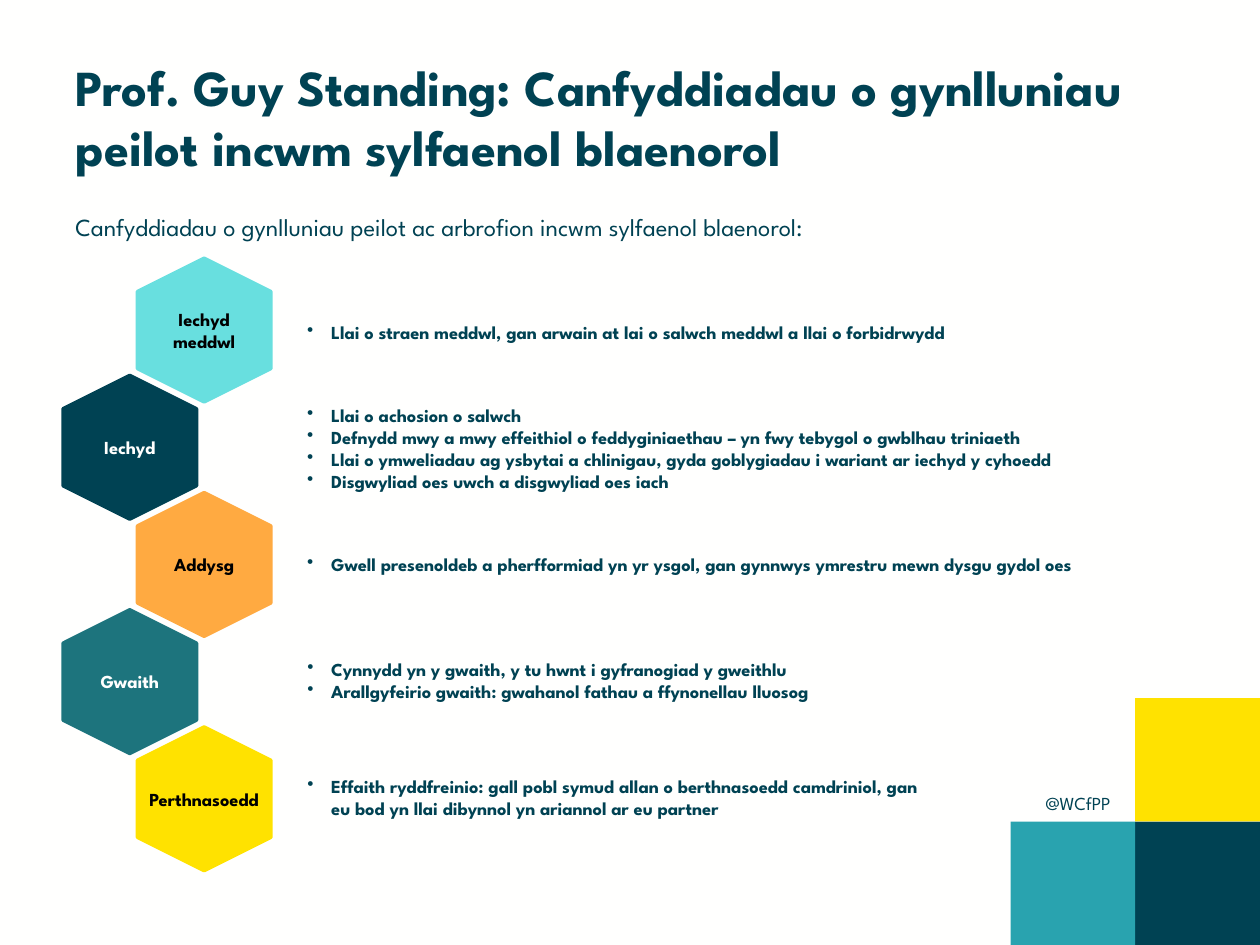
from pptx import Presentation
from pptx import util as u
from pptx.dml.color import RGBColor
from pptx.enum import shapes, text
from pptx.oxml.ns import qn
from lxml import etree

NAVY = RGBColor(0x00, 0x42, 0x53)
YELLOW = RGBColor(0xFF, 0xE2, 0x00)
TEAL = RGBColor(0x29, 0xA3, 0xAF)
DARK_TEAL = RGBColor(0x1D, 0x74, 0x7D)
AQUA = RGBColor(0x68, 0xDF, 0xDF)
ORANGE = RGBColor(0xFF, 0xAA, 0x41)
BLACK = RGBColor(0x00, 0x00, 0x00)
OFF_WHITE = RGBColor(0xFF, 0xFF, 0xFE)

TILE_WIDTH, TILE_HEIGHT = 0.99, 0.98
HEXAGON_TOP, HEXAGON_STEP = 2.09, 0.93
HEXAGON_LEFTS = (1.05, 0.46)
FINDINGS_LEFT = 2.34

THEMES = [
    ("Iechyd meddwl", AQUA, BLACK, (2.49, 6.96, 0.29), [
        "Llai o straen meddwl, gan arwain at lai o salwch meddwl a llai o forbidrwydd",
    ]),
    ("Iechyd", NAVY, OFF_WHITE, (3.15, 7.16, 0.81), [
        "Llai o achosion o salwch",
        "Defnydd mwy a mwy effeithiol o feddyginiaethau – yn fwy tebygol o gwblhau triniaeth",
        "Llai o ymweliadau ag ysbytai a chlinigau, gyda goblygiadau i wariant ar iechyd y cyhoedd",
        "Disgwyliad oes uwch a disgwyliad oes iach",
    ]),
    ("Addysg", ORANGE, BLACK, (4.34, 7.16, 0.28), [
        "Gwell presenoldeb a pherfformiad yn yr ysgol, gan gynnwys ymrestru mewn dysgu gydol oes",
    ]),
    ("Gwaith", DARK_TEAL, OFF_WHITE, (5.17, 6.19, 0.45), [
        "Cynnydd yn y gwaith, y tu hwnt i gyfranogiad y gweithlu",
        "Arallgyfeirio gwaith: gwahanol fathau a ffynonellau lluosog",
    ]),
    ("Perthnasoedd", YELLOW, BLACK, (6.1, 5.21, 0.45), [
        "Effaith ryddfreinio: gall pobl symud allan o berthnasoedd camdriniol, gan "
        "eu bod yn llai dibynnol yn ariannol ar eu partner",
    ]),
]


class SlideBuilder:
    font_name = "League Spartan"
    small = 10.5

    def __init__(self, slide):
        self.slide = slide
        slide.background.fill.solid()
        slide.background.fill.fore_color.rgb = OFF_WHITE

    def style(self, paragraph, size, color=NAVY, bold=False):
        font = paragraph.font
        font.name = self.font_name
        font.size = u.Pt(size)
        font.bold = bold
        font.color.rgb = color

    def title(self, wording, left, top, width, height):
        title = self.slide.shapes.title
        title.left, title.top = u.Inches(left), u.Inches(top)
        title.width, title.height = u.Inches(width), u.Inches(height)
        frame = title.text_frame
        frame.text = wording
        frame.auto_size = text.MSO_AUTO_SIZE.NONE
        frame.vertical_anchor = text.MSO_ANCHOR.MIDDLE
        paragraph = frame.paragraphs[0]
        paragraph.alignment = text.PP_ALIGN.LEFT
        self.style(paragraph, 28.8, bold=True)

    def text_box(self, lines, left, top, width, height, size=small, bold=False):
        box = self.slide.shapes.add_textbox(
            u.Inches(left), u.Inches(top), u.Inches(width), u.Inches(height))
        frame = box.text_frame
        frame.text = "\n".join(lines)
        frame.word_wrap = True
        frame.auto_size = text.MSO_AUTO_SIZE.SHAPE_TO_FIT_TEXT
        for paragraph in frame.paragraphs:
            self.style(paragraph, size, bold=bold)
        return frame

    def bullets(self, lines, left, top, width, height):
        frame = self.text_box(lines, left, top, width, height, bold=True)
        frame.vertical_anchor = text.MSO_ANCHOR.MIDDLE
        for paragraph in frame.paragraphs:
            properties = paragraph.font and paragraph._p.get_or_add_pPr()
            properties.set("marL", str(u.Inches(0.19)))
            properties.set("indent", str(-u.Inches(0.19)))
            bullet = etree.Element(qn("a:buChar"), char="•")
            properties.insert(0, bullet)

    def shape(self, kind, left, top, width, height, color):
        shape = self.slide.shapes.add_shape(
            kind, u.Inches(left), u.Inches(top), u.Inches(width), u.Inches(height))
        shape.shadow.inherit = False
        shape.fill.solid()
        shape.fill.fore_color.rgb = color
        shape.line.fill.background()
        return shape

    def tile(self, left, top, color):
        self.shape(shapes.MSO_SHAPE.RECTANGLE, left, top, TILE_WIDTH, TILE_HEIGHT, color)

    def hexagon(self, label, left, top, color, text_color):
        hexagon = self.shape(shapes.MSO_SHAPE.HEXAGON, left, top, 1.14, 1.06, color)
        hexagon.rotation = 90
        hexagon.line.color.rgb = color
        hexagon.line.width = u.Pt(2)
        hexagon.element.txBody.bodyPr.set("vert", "vert270")
        frame = hexagon.text_frame
        frame.text = label
        frame.word_wrap = " " in label
        frame.vertical_anchor = text.MSO_ANCHOR.MIDDLE
        frame.margin_left = frame.margin_right = frame.margin_top = frame.margin_bottom = 0
        paragraph = frame.paragraphs[0]
        paragraph.alignment = text.PP_ALIGN.CENTER
        self.style(paragraph, self.small, text_color, bold=True)


def main():
    presentation = Presentation()
    presentation.slide_width, presentation.slide_height = u.Inches(10), u.Inches(7.5)
    builder = SlideBuilder(presentation.slides.add_slide(presentation.slide_layouts[5]))

    right, bottom = 10 - TILE_WIDTH, 7.5 - TILE_HEIGHT
    builder.tile(right, bottom, NAVY)
    builder.tile(right, bottom - TILE_HEIGHT, YELLOW)
    builder.tile(right - TILE_WIDTH, bottom, TEAL)
    builder.text_box(["@WCfPP"], 8.2, 6.24, 0.81, 0.29)

    builder.title("Prof. Guy Standing: Canfyddiadau o gynlluniau peilot incwm sylfaenol blaenorol",
                  0.5, 0.3, 9, 1.25)
    introduction = builder.text_box(
        ["Canfyddiadau o gynlluniau peilot ac arbrofion incwm sylfaenol blaenorol:"],
        0.5, 1.62, 8.49, 0.33, size=14).paragraphs[0]
    introduction.alignment = text.PP_ALIGN.JUSTIFY
    introduction.line_spacing = 1.07
    introduction.space_after = u.Pt(6)

    for index, (label, color, text_color, (top, width, height), findings) in enumerate(THEMES):
        builder.hexagon(label, HEXAGON_LEFTS[index % 2], HEXAGON_TOP + index * HEXAGON_STEP,
                        color, text_color)
        builder.bullets(findings, FINDINGS_LEFT, top, width, height)

    presentation.save("out.pptx")


if __name__ == "__main__":
    main()
